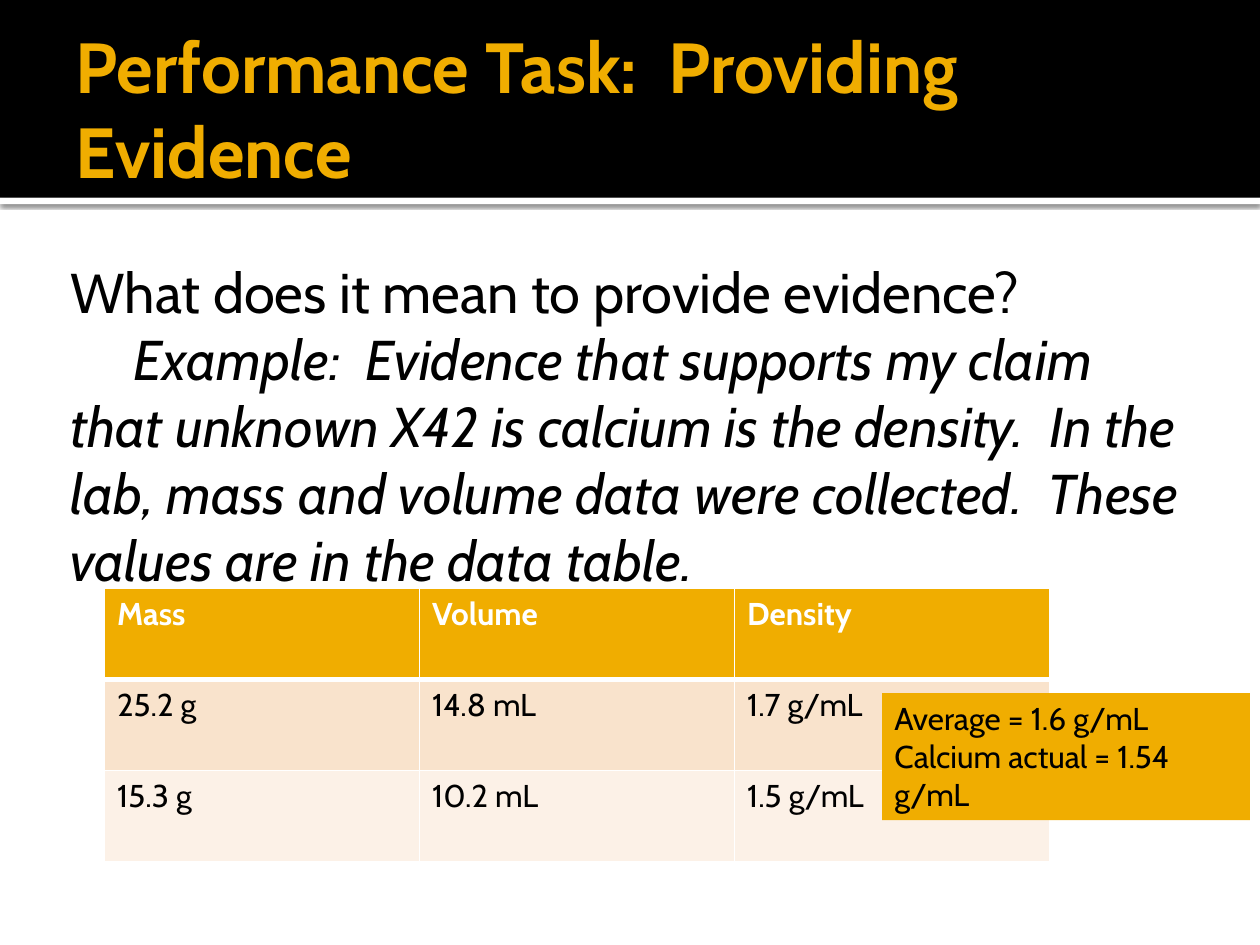
from lxml import etree
from pptx import Presentation
from pptx.dml.color import RGBColor
from pptx.enum.shapes import MSO_SHAPE
from pptx.enum.text import MSO_ANCHOR, PP_ALIGN
from pptx.oxml.ns import qn
from pptx.util import Inches, Pt

RECT = MSO_SHAPE.RECTANGLE
TOP, MIDDLE = MSO_ANCHOR.TOP, MSO_ANCHOR.MIDDLE
LEFT = PP_ALIGN.LEFT

BLACK = RGBColor(0x00, 0x00, 0x00)
WHITE = RGBColor(0xFF, 0xFF, 0xFF)
GOLD = RGBColor(0xF0, 0xAD, 0x00)
PEACH = RGBColor(0xF9, 0xE3, 0xCC)
CREAM = RGBColor(0xFC, 0xF1, 0xE7)

FONT = "Cabin"
WIDTH, HEIGHT = 10, 7.5
BAND = 1.57  # height of the title band
DEFAULT_INSETS = (0.1, 0.05, 0.1, 0.05)

TITLE = {"size": Pt(40.5), "bold": True, "color": GOLD}
BODY = {"size": Pt(32), "color": BLACK}
EXAMPLE = {**BODY, "italic": True}
HEADER = {"size": Pt(18), "bold": True, "color": WHITE}
SMALL = {"size": Pt(18), "bold": False, "color": BLACK}

ROWS = [
    ("Mass", "Volume", "Density"),
    ("25.2 g", "14.8 mL", "1.7 g/mL"),
    ("15.3 g", "10.2 mL", "1.5 g/mL"),
]
ROW_FILLS = (GOLD, PEACH, CREAM)


def write(tf, paragraphs):
    """Fill a text frame with (text, format) paragraphs."""
    for i, (text, fmt) in enumerate(paragraphs):
        p = tf.paragraphs[0] if i == 0 else tf.add_paragraph()
        p.alignment = LEFT
        r = p.add_run()
        r.text = text
        r.font.name = FONT
        for name, value in fmt.items():
            if name == "color":
                r.font.color.rgb = value
            else:
                setattr(r.font, name, value)


def set_frame(tf, insets, anchor):
    tf.word_wrap = True
    tf.vertical_anchor = anchor
    for side, inset in zip(("left", "top", "right", "bottom"), insets):
        setattr(tf, f"margin_{side}", Inches(inset))


def add_text(s, box, paragraphs, insets, anchor=TOP):
    sp = s.shapes.add_textbox(*map(Inches, box))
    set_frame(sp.text_frame, insets, anchor)
    write(sp.text_frame, paragraphs)


def add_rect(s, box, color):
    sp = s.shapes.add_shape(RECT, *map(Inches, box))
    sp.shadow.inherit = False
    sp.fill.solid()
    sp.fill.fore_color.rgb = color
    sp.line.fill.background()
    return sp


def add_shadow(sp, color, alpha, blur, dist, angle):
    effects = sp._element.spPr.find(qn("a:effectLst"))
    shadow = etree.SubElement(
        effects, qn("a:outerShdw"), blurRad=str(Pt(blur)), dist=str(Pt(dist)),
        dir=str(angle * 60000), algn="t", rotWithShape="0")
    clr = etree.SubElement(shadow, qn("a:srgbClr"), val=str(color))
    etree.SubElement(clr, qn("a:alpha"), val=str(alpha * 1000))


def set_borders(cell, color, widths):
    """Draw the cell's left, right, top and bottom lines."""
    tcPr = cell._tc.get_or_add_tcPr()
    for i, (tag, width) in enumerate(zip(("lnL", "lnR", "lnT", "lnB"), widths)):
        ln = etree.Element(qn(f"a:{tag}"), w=str(Pt(width)))
        fill = etree.SubElement(ln, qn("a:solidFill"))
        etree.SubElement(fill, qn("a:srgbClr"), val=str(color))
        tcPr.insert(i, ln)


def add_data_table(s, box):
    frame = s.shapes.add_table(len(ROWS), len(ROWS[0]), *map(Inches, box))
    for i, values in enumerate(ROWS):
        for j, text in enumerate(values):
            cell = frame.table.cell(i, j)
            cell.fill.solid()
            cell.fill.fore_color.rgb = ROW_FILLS[i]
            write(cell.text_frame, [(text, SMALL if i else HEADER)])
            # The rule under the header is heavier
            set_borders(cell, WHITE, (1, 1, 3 if i == 1 else 1, 1 if i else 3))


def main():
    prs = Presentation()
    prs.slide_width, prs.slide_height = Inches(WIDTH), Inches(HEIGHT)
    s = prs.slides.add_slide(prs.slide_layouts[6])

    # Title band with a shadowed white strip below
    strip = add_rect(s, (0, BAND, WIDTH, 0.05), WHITE)
    add_shadow(strip, BLACK, alpha=60, blur=2.5, dist=0.8, angle=90)
    add_rect(s, (0, 0, WIDTH, BAND), BLACK)
    margin = WIDTH * 0.05
    text_width = WIDTH - 2 * margin
    add_text(s, (margin, 0.17, text_width, 1.37),
             [("Performance Task:  Providing Evidence", TITLE)],
             (0.1, 0.05, 0.05, 0.05), MIDDLE)

    # Question and example
    add_text(s, (margin, 1.94, text_width, 5.06), [
        ("What does it mean to provide evidence?", BODY),
        ("\tExample:  Evidence that supports my claim that unknown X42 is "
         "calcium is the density.  In the lab, mass and volume data were "
         "collected.  These values are in the data table.", EXAMPLE),
    ], (0.06, 0.1, 0.1, 0.05))

    # Measurements
    add_data_table(s, (0.83, 4.67, WIDTH * 0.75, 2.17))

    # Result callout
    callout = add_rect(s, (7, 5.5, 2.92, 1.01), GOLD)
    set_frame(callout.text_frame, DEFAULT_INSETS, TOP)
    write(callout.text_frame, [
        ("Average = 1.6 g/mL", SMALL),
        ("Calcium actual = 1.54 g/mL", SMALL),
    ])

    prs.save("out.pptx")


if __name__ == "__main__":
    main()
